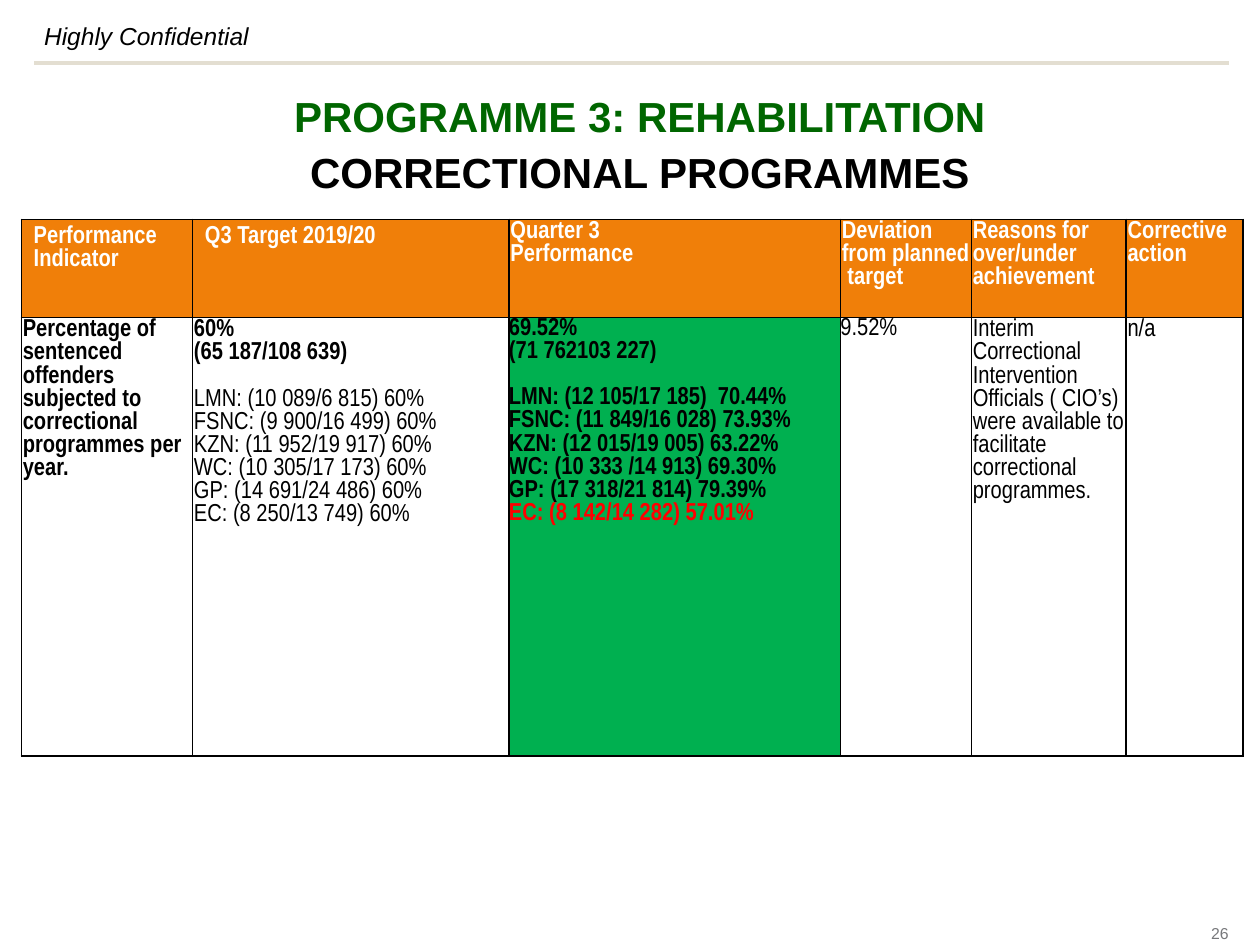
from dataclasses import dataclass
from typing import Optional

import lxml.etree
import pptx
import pptx.dml.color
import pptx.enum.shapes
import pptx.enum.text
import pptx.oxml
import pptx.oxml.ns
import pptx.util

Cm, Pt = pptx.util.Cm, pptx.util.Pt
ALIGN = pptx.enum.text.PP_ALIGN
ANCHOR = pptx.enum.text.MSO_ANCHOR
qn = pptx.oxml.ns.qn

COLORS = {
    "black": "000000", "white": "FFFFFF", "rule": "E3DED1", "page": "77787B",
    "title": "006600", "header": "F07F09", "met": "00B050", "missed": "FF0000",
}
SIDES = ("left", "right", "top", "bottom")
TIGHT = (0.03, 0.03, 0.03, 0)
FLUSH = (0, 0, 0, 0)
DEFAULT = (0.25, 0.25, 0.13, 0.13)


@dataclass
class Line:
    text: str
    bold: bool = False
    color: str = "black"
    gap: float = 0  # points above the line


@dataclass
class Cell:
    lines: list[Line]
    insets: tuple = TIGHT
    fill: Optional[str] = None


def rgb(name: str):
    return pptx.dml.color.RGBColor.from_string(COLORS[name])


def set_attrs(obj, values: dict) -> None:
    for name, value in values.items():
        setattr(obj, name, value)


def add_run(p, text: str, color: str, **font) -> None:
    r = p.add_run()
    r.text = text
    set_attrs(r.font, {"name": "Arial", **font})
    r.font.color.rgb = rgb(color)


def add_box(s, left: float, top: float, width: float, height: float,
            inset: float = 0, **frame):
    """Add a text box and return its first paragraph."""
    sp = s.shapes.add_textbox(Cm(left), Cm(top), Cm(width), Cm(height))
    tf = sp.text_frame
    set_attrs(tf, {"word_wrap": True, **frame,
                   **{f"margin_{side}": Cm(inset) for side in SIDES}})
    return tf.paragraphs[0]


def add_borders(cell, color: str, width: float) -> None:
    tc_pr = cell._tc.get_or_add_tcPr()
    for tag in ("a:lnL", "a:lnR", "a:lnT", "a:lnB"):
        ln = lxml.etree.SubElement(tc_pr, qn(tag), w=str(Pt(width)))
        fill = lxml.etree.SubElement(ln, qn("a:solidFill"))
        lxml.etree.SubElement(fill, qn("a:srgbClr"), val=COLORS[color])


def fill_cell(cell, data: Cell) -> None:
    add_borders(cell, "black", 1)
    if data.fill:
        cell.fill.solid()
        cell.fill.fore_color.rgb = rgb(data.fill)
    else:
        cell.fill.background()
    set_attrs(cell, {f"margin_{side}": Cm(v) for side, v in zip(SIDES, data.insets)})
    cell.vertical_anchor = ANCHOR.TOP
    tf = cell.text_frame
    for i, line in enumerate(data.lines):
        p = tf.add_paragraph() if i else tf.paragraphs[0]
        p.space_before = Pt(line.gap)
        add_run(p, line.text, line.color, name="Arial Narrow", size=Pt(14), bold=line.bold)


def header(*texts: str, insets: tuple = TIGHT) -> Cell:
    return Cell([Line(t, True, "white") for t in texts], insets, "header")


def add_table(s, left: float, top: float, widths: list[float],
              heights: list[float], rows: list[list[Cell]]) -> None:
    table = s.shapes.add_table(len(heights), len(widths), Cm(left), Cm(top),
                               Cm(sum(widths)), Cm(sum(heights))).table
    set_attrs(table, {"first_row": False, "horz_banding": False})
    for col, width in zip(table.columns, widths):
        col.width = Cm(width)
    for row, height, cells in zip(table.rows, heights, rows):
        row.height = Cm(height)
        for cell, data in zip(row.cells, cells):
            fill_cell(cell, data)


# Table content: regional targets and results follow the national totals
TARGETS = [
    "LMN: (10 089/6 815) 60%", "FSNC: (9 900/16 499) 60%", "KZN: (11 952/19 917) 60%",
    "WC: (10 305/17 173) 60%", "GP: (14 691/24 486) 60%", "EC: (8 250/13 749) 60%",
]
RESULTS = [
    "LMN: (12 105/17 185)  70.44%", "FSNC: (11 849/16 028) 73.93%",
    "KZN: (12 015/19 005) 63.22%", "WC: (10 333 /14 913) 69.30%",
    "GP: (17 318/21 814) 79.39%",
]


def totals_and_regions(totals: list[str], regions: list[str], bold: bool) -> list[Line]:
    return ([Line(t, True) for t in totals]
            + [Line(t, bold, gap=0 if i else 13.3) for i, t in enumerate(regions)])


ROWS = [
    [
        header("Performance Indicator", insets=DEFAULT),
        header("Q3 Target 2019/20", insets=DEFAULT),
        header("Quarter 3", "Performance"),
        header("Deviation from planned  target"),
        header("Reasons for over/under achievement"),
        header("Corrective action"),
    ],
    [
        Cell([Line("Percentage of sentenced offenders subjected to correctional "
                   "programmes per year.", True)]),
        Cell(totals_and_regions(["60%", "(65 187/108 639)"], TARGETS, False)),
        Cell(totals_and_regions(["69.52%", "(71 762103 227)"], RESULTS, True)
             + [Line("EC: (8 142/14 282) 57.01%", True, "missed")], FLUSH, "met"),
        Cell([Line("9.52%")], FLUSH),
        Cell([Line("Interim Correctional Intervention Officials ( CIO’s) were "
                   "available to facilitate correctional programmes.")]),
        Cell([Line("n/a")]),
    ],
]


def main() -> None:
    prs = pptx.Presentation()
    prs.slide_width, prs.slide_height = Cm(25.4), Cm(19.05)
    s = prs.slides.add_slide(prs.slide_layouts[6])

    # Header rule
    rule = s.shapes.add_connector(pptx.enum.shapes.MSO_CONNECTOR.STRAIGHT,
                                  Cm(0.69), Cm(1.27), Cm(24.77), Cm(1.27))
    rule.line.color.rgb = rgb("rule")
    rule.line.width = Pt(2.25)
    lxml.etree.SubElement(rule._element.spPr, qn("a:effectLst"))

    # Page number and confidentiality mark
    p = add_box(s, 24.03, 18.62, 0.74, 0.38, vertical_anchor=ANCHOR.MIDDLE)
    p.alignment = ALIGN.RIGHT
    add_run(p, "26", "page", size=Pt(9))
    p = add_box(s, 0.69, 0.23, 4.67, 0.99, inset=0.2, word_wrap=False)
    add_run(p, "Highly Confidential", "black", size=Pt(14), italic=True)

    # Performance table
    add_table(s, 0.43, 4.42, [3.45, 6.38, 6.68, 2.64, 3.12, 2.36], [1.98, 8.84], ROWS)

    # Title
    p = add_box(s, 1.04, 1.73, 23.72, 3.38)
    set_attrs(p, {"alignment": ALIGN.CENTER, "line_spacing": 1.1})
    add_run(p, "PROGRAMME 3: REHABILITATION", "title", size=Pt(24), bold=True)
    p.add_line_break()
    add_run(p, "CORRECTIONAL PROGRAMMES", "black", size=Pt(24), bold=True)

    prs.save("out.pptx")


if __name__ == "__main__":
    main()
